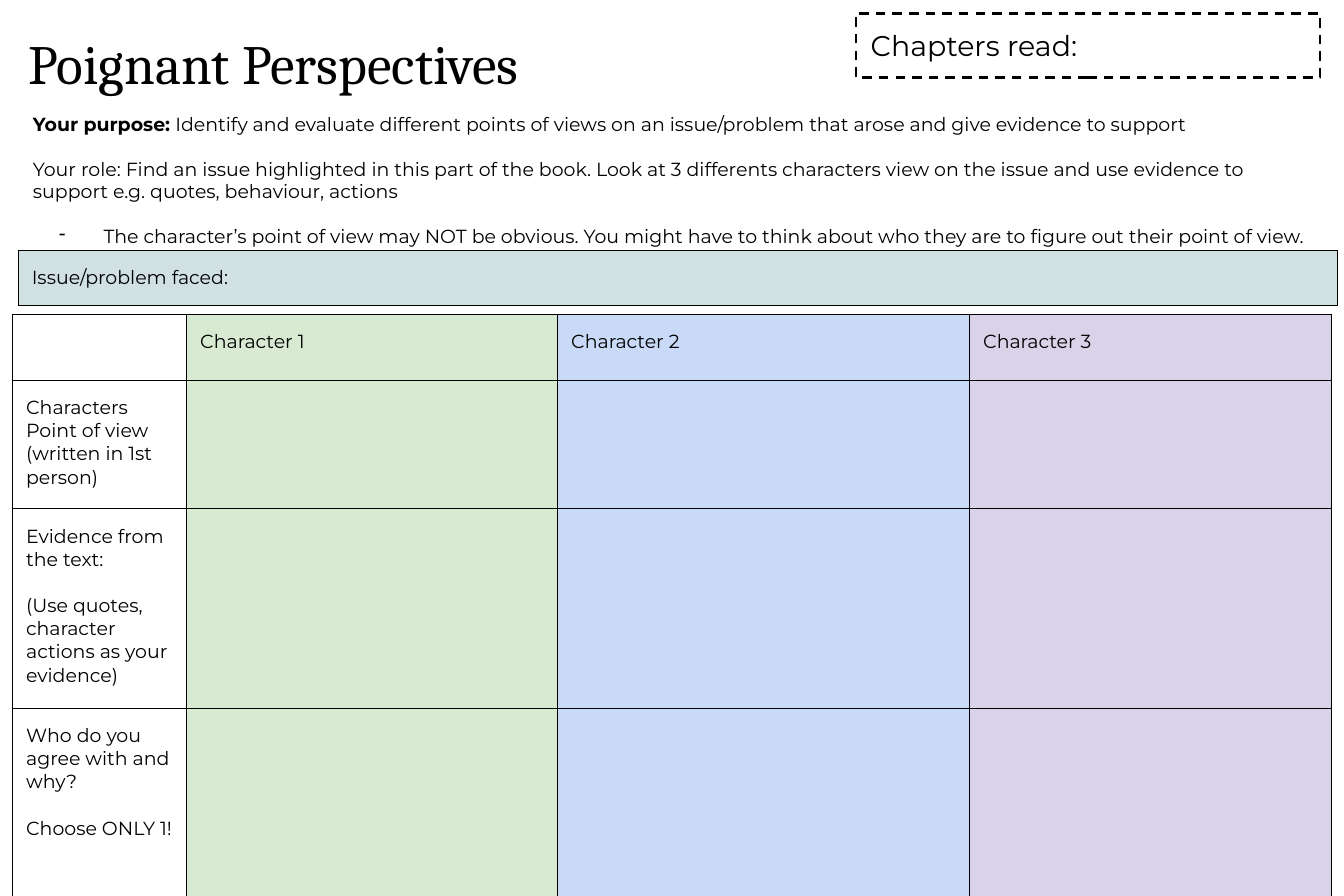
from dataclasses import dataclass

from lxml import etree
from pptx import Presentation
from pptx.dml.color import RGBColor
from pptx.enum.dml import MSO_LINE
from pptx.enum.shapes import MSO_SHAPE
from pptx.enum.text import MSO_ANCHOR, PP_ALIGN
from pptx.oxml.ns import qn
from pptx.util import Pt

PX = 9144  # EMU: 100 px to the inch
TOP, MIDDLE = MSO_ANCHOR.TOP, MSO_ANCHOR.MIDDLE
LEFT = PP_ALIGN.LEFT
DASH = MSO_LINE.DASH
RECTANGLE = MSO_SHAPE.RECTANGLE

COLORS = {
    "ink": "000000",
    "issue": "D0E0E3",
    "character 1": "D9EAD3",
    "character 2": "C9DAF8",
    "character 3": "D9D2E9",
}
HEADING_FONT, BODY_FONT = "Cambria", "Montserrat"
BODY_SIZE = 12
TEXT_INSET = 13
CELL_INSETS = (12, 14)
CELL_GAP = 14.6
BORDER_WIDTH = Pt(0.75)


@dataclass(frozen=True)
class Box:
    left: int
    top: int
    width: int
    height: int

    def emu(self) -> tuple[int, int, int, int]:
        return self.left * PX, self.top * PX, self.width * PX, self.height * PX


@dataclass(frozen=True)
class Cell:
    paragraphs: tuple[str, ...] = ()
    color: str = ""


@dataclass(frozen=True)
class Grid:
    left: int
    top: int
    columns: tuple[int, ...]
    rows: tuple[int, ...]
    cells: tuple[tuple[Cell, ...], ...]


CHARACTERS = ("Character 1", "Character 2", "Character 3")
QUESTIONS = (
    ("Characters Point of view (written in 1st person)",),
    ("Evidence from the text:", "(Use quotes, character actions as your evidence)"),
    ("Who do you agree with and why?", "Choose ONLY 1!"),
)
HEADER = (Cell(), *(Cell((name,), name.lower()) for name in CHARACTERS))
ANSWERS = tuple(Cell(color=name.lower()) for name in CHARACTERS)

GRIDS = (
    Grid(11, 276, (153, 326, 362, 318), (58, 113, 175, 173),
         (HEADER, *((Cell(question), *ANSWERS) for question in QUESTIONS))),
    Grid(16, 220, (1159,), (47,), ((Cell(("Issue/problem faced:",), "issue"),),)),
)

PURPOSE_LABEL = "Your purpose:"
INSTRUCTIONS = (
    " Identify and evaluate different points of views on an issue/problem that arose "
    "and give evidence to support",
    "Your role: Find an issue highlighted in this part of the book. Look at 3 differents "
    "characters view on the issue and use evidence to support e.g. quotes, behaviour, actions",
    "The character’s point of view may NOT be obvious. You might have to think about who "
    "they are to figure out their point of view.",
)


def rgb(name: str) -> RGBColor:
    return RGBColor.from_string(COLORS[name])


def write(frame, paragraphs: tuple[str, ...], size: float = BODY_SIZE,
          font: str = BODY_FONT, gap: float = 0) -> None:
    """Fill a text frame with left-aligned paragraphs, gap points apart."""
    frame.text = "\n".join(paragraphs)
    for index, paragraph in enumerate(frame.paragraphs):
        paragraph.alignment = LEFT
        if index and gap:
            paragraph.space_before = Pt(gap)
        for run in paragraph.runs:
            run.font.size = Pt(size)
            run.font.name = font
            run.font.color.rgb = rgb("ink")


def prepare_frame(shape, anchor: MSO_ANCHOR):
    """Set wrapping, insets and anchor, and return the text frame."""
    frame = shape.text_frame
    frame.word_wrap = True
    frame.vertical_anchor = anchor
    frame.margin_left = frame.margin_right = TEXT_INSET * PX
    frame.margin_top = frame.margin_bottom = TEXT_INSET * PX
    return frame


def add_title(slide) -> None:
    title = slide.shapes.add_textbox(*Box(12, 11, 1101, 88).emu())
    write(prepare_frame(title, MIDDLE), ("Poignant Perspectives",), 35, HEADING_FONT)


def add_instructions(slide) -> None:
    instructions = slide.shapes.add_textbox(*Box(16, 87, 1159, 133).emu())
    frame = prepare_frame(instructions, TOP)
    write(frame, INSTRUCTIONS, gap=15)
    for paragraph in frame.paragraphs:
        paragraph.line_spacing = 0.95

    purpose, _, hint = frame.paragraphs
    detail = purpose.runs[0]
    rest = purpose.add_run()
    rest.text, detail.text = detail.text, PURPOSE_LABEL
    rest.font.size, rest.font.name = Pt(BODY_SIZE), BODY_FONT
    rest.font.color.rgb = rgb("ink")
    detail.font.bold = True

    properties = hint._p.get_or_add_pPr()
    properties.set("marL", str(62 * PX))
    properties.set("indent", str(-39 * PX))
    etree.SubElement(properties, qn("a:buChar"), char="-")


def add_chapters_box(slide) -> None:
    chapters = slide.shapes.add_shape(RECTANGLE, *Box(752, 12, 408, 56).emu())
    chapters.shadow.inherit = False
    chapters.fill.background()
    chapters.line.color.rgb = rgb("ink")
    chapters.line.width = Pt(1.5)
    chapters.line.dash_style = DASH
    write(prepare_frame(chapters, MIDDLE), ("Chapters read:",), 18)


def add_borders(cell) -> None:
    properties = cell._tc.get_or_add_tcPr()
    for index, side in enumerate(("a:lnL", "a:lnR", "a:lnT", "a:lnB")):
        border = etree.Element(qn(side), w=str(BORDER_WIDTH))
        fill = etree.SubElement(border, qn("a:solidFill"))
        etree.SubElement(fill, qn("a:srgbClr"), val=COLORS["ink"])
        properties.insert(index, border)


def format_cell(cell, content: Cell) -> None:
    horizontal, vertical = CELL_INSETS
    cell.margin_left = cell.margin_right = horizontal * PX
    cell.margin_top = cell.margin_bottom = vertical * PX
    cell.vertical_anchor = TOP
    if content.color:
        cell.fill.solid()
        cell.fill.fore_color.rgb = rgb(content.color)
    else:
        cell.fill.background()
    add_borders(cell)
    if content.paragraphs:
        write(cell.text_frame, content.paragraphs, gap=CELL_GAP)


def add_grid(slide, grid: Grid) -> None:
    area = Box(grid.left, grid.top, sum(grid.columns), sum(grid.rows))
    table = slide.shapes.add_table(len(grid.rows), len(grid.columns), *area.emu()).table
    table.first_row = table.horz_banding = False
    for column, width in zip(table.columns, grid.columns):
        column.width = width * PX
    for row, height, contents in zip(table.rows, grid.rows, grid.cells):
        row.height = height * PX
        for cell, content in zip(row.cells, contents):
            format_cell(cell, content)


def main() -> None:
    presentation = Presentation()
    presentation.slide_width, presentation.slide_height = 1181 * PX, 787 * PX
    slide = presentation.slides.add_slide(presentation.slide_layouts[6])
    add_title(slide)
    add_instructions(slide)
    add_chapters_box(slide)
    for grid in GRIDS:
        add_grid(slide, grid)
    presentation.save("out.pptx")


if __name__ == "__main__":
    main()
